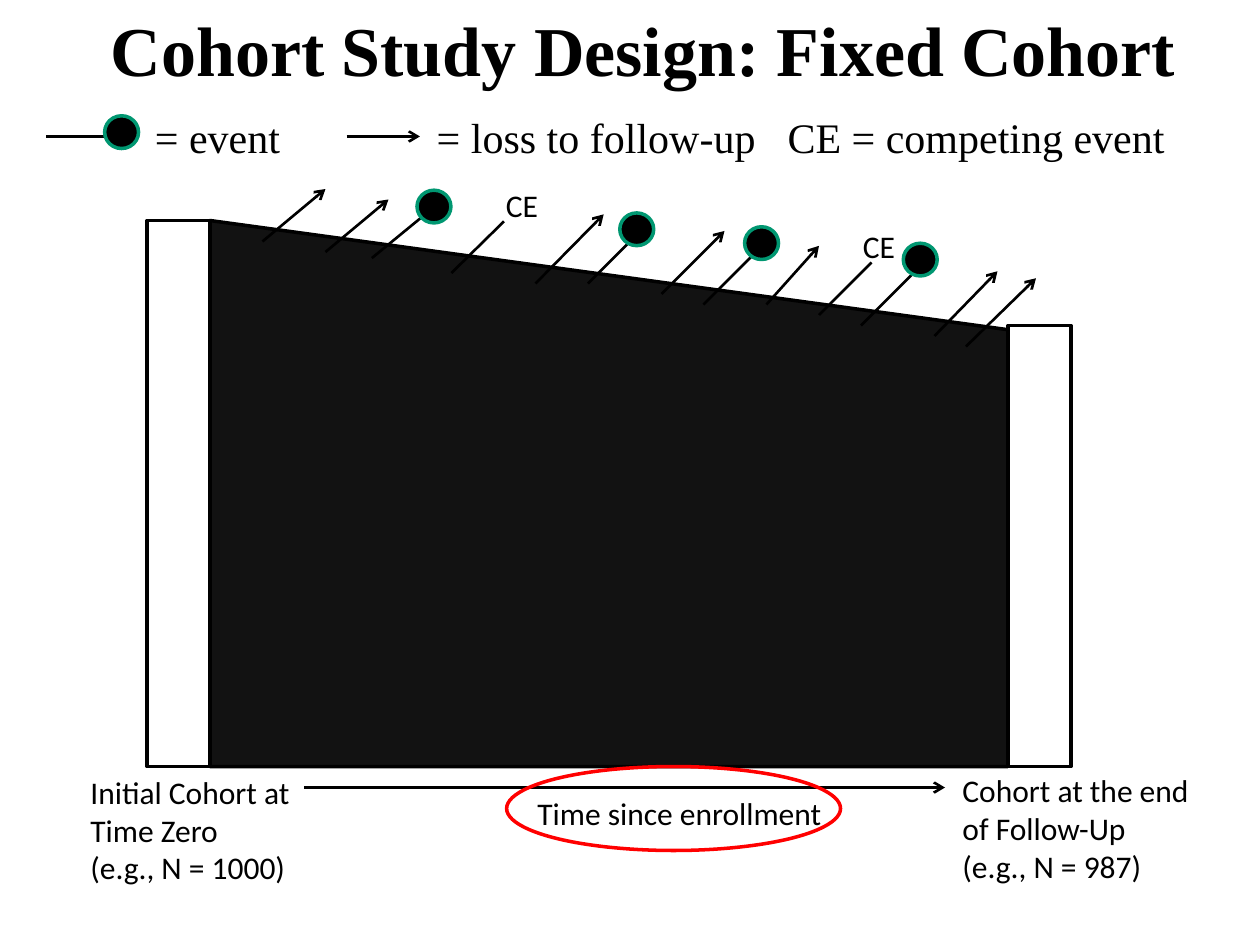
from typing import NamedTuple, Optional

from lxml.etree import SubElement
from pptx import Presentation
from pptx.dml.color import RGBColor
from pptx.enum.shapes import MSO_CONNECTOR, MSO_SHAPE
from pptx.enum.text import MSO_ANCHOR
from pptx.oxml.ns import qn
from pptx.util import Pt

COLORS = {"ink": "000000", "cohort": "121212", "event": "009771", "highlight": "FF0000"}
SANS, SERIF = "Calibri", "Times New Roman"


class Line(NamedTuple):
    x1: float
    y1: float
    x2: float
    y2: float
    arrow: bool = False
    width: float = 1.5


class Outline(NamedTuple):
    kind: MSO_SHAPE
    x: float
    y: float
    w: float
    h: float
    line: str = "ink"
    fill: Optional[str] = None


class Label(NamedTuple):
    x: float
    y: float
    w: float
    h: float
    text: str
    size: float = 18
    font: str = SANS
    bold: bool = False
    wrap: bool = False


def rgb(name: str) -> RGBColor:
    return RGBColor.from_string(COLORS[name])


def add_line(slide, line: Line) -> None:
    cx = slide.shapes.add_connector(
        MSO_CONNECTOR.STRAIGHT, Pt(line.x1), Pt(line.y1), Pt(line.x2), Pt(line.y2))
    cx.line.color.rgb = rgb("ink")
    cx.line.width = Pt(line.width)
    if line.arrow:
        SubElement(cx.line._get_or_add_ln(), qn("a:tailEnd"), type="arrow")
    SubElement(cx._element.spPr, qn("a:effectLst"))


def add_outline(slide, item: Outline):
    sp = slide.shapes.add_shape(item.kind, Pt(item.x), Pt(item.y), Pt(item.w), Pt(item.h))
    sp.shadow.inherit = False
    sp.line.color.rgb = rgb(item.line)
    sp.line.width = Pt(2)
    if item.fill:
        sp.fill.solid()
        sp.fill.fore_color.rgb = rgb(item.fill)
    else:
        sp.fill.background()
    return sp


def add_event_dot(slide, x: float, y: float) -> None:
    add_outline(slide, Outline(MSO_SHAPE.OVAL, x, y, 19.4, 18.7, "event", "ink"))


def add_label(slide, label: Label):
    box = slide.shapes.add_textbox(Pt(label.x), Pt(label.y), Pt(label.w), Pt(label.h))
    tf = box.text_frame
    tf.word_wrap = label.wrap
    tf.text = label.text
    for p in tf.paragraphs:
        for r in p.runs:
            r.font.name = label.font
            r.font.size = Pt(label.size)
            r.font.bold = label.bold
            r.font.color.rgb = rgb("ink")
    return tf


def add_tab_stops(p, stops: list[float]) -> None:
    tabs = SubElement(p._p.get_or_add_pPr(), qn("a:tabLst"))
    for stop in stops:
        SubElement(tabs, qn("a:tab"), pos=str(Pt(stop)), algn="l")


COHORT = Outline(MSO_SHAPE.FLOWCHART_MANUAL_INPUT, 120, 126, 456, 312, fill="cohort")
BARS = [
    Outline(MSO_SHAPE.RECTANGLE, 576, 186, 36, 252),
    Outline(MSO_SHAPE.RECTANGLE, 84, 126, 36, 312),
]
LOSSES = [
    (150, 138, 186, 108), (186, 144, 222, 114), (306, 162, 345, 122.5),
    (378, 168, 414, 132), (438, 174, 468, 140.5), (534, 192, 570, 155),
    (552, 198, 592, 159),
]
EVENT_STEMS = [
    (212.5, 147.5, 246, 120), (336, 162, 366, 132),
    (402, 174, 432, 144), (492, 186, 522, 156),
]
COMPETING_STEMS = [(258, 156, 288, 126.5), (468, 180, 498, 150)]
EVENT_DOTS = [(59.8, 66.2), (238.3, 108.7), (354.2, 121.7), (425.5, 129.6), (516.2, 139)]
TIME_AXIS = Line(174, 450, 540, 450, arrow=True)
LEGEND_LINES = [Line(26.5, 78, 62.5, 78, width=2), Line(198, 78, 240, 78, arrow=True)]
LEGEND = Label(24, 60, 664.5, 36,
               "\t= event\t= loss to follow-up\tCE = competing event", 24, SERIF, wrap=True)
LEGEND_STOPS = [57.5, 218.5, 419]
LABELS = [
    Label(56.2, 0, 629.3, 55.4, "Cohort Study Design: Fixed Cohort", 40, SERIF, bold=True),
    Label(282, 103, 33, 29, "CE"),
    Label(486, 126, 33, 29, "CE"),
    Label(300, 450, 178.5, 29, "Time since enrollment"),
    Label(44.6, 438, 141, 72.7, "Initial Cohort at Time Zero\n(e.g., N = 1000)", wrap=True),
    Label(542.9, 437, 145.5, 72.7, "Cohort at the end\nof Follow-Up\n(e.g., N = 987)"),
]
TIME_HIGHLIGHT = Outline(MSO_SHAPE.OVAL, 289.5, 438, 190.8, 48, "highlight")


def main() -> None:
    prs = Presentation()
    prs.slide_width, prs.slide_height = Pt(720), Pt(540)
    s = prs.slides.add_slide(prs.slide_layouts[6])

    cohort = add_outline(s, COHORT)
    cohort._element.spPr.find(qn("a:xfrm")).set("flipH", "1")
    for bar in BARS:
        add_outline(s, bar)

    for ends in LOSSES:
        add_line(s, Line(*ends, arrow=True))
    for ends in EVENT_STEMS + COMPETING_STEMS:
        add_line(s, Line(*ends))
    for line in [TIME_AXIS, *LEGEND_LINES]:
        add_line(s, line)
    for x, y in EVENT_DOTS:
        add_event_dot(s, x, y)

    legend = add_label(s, LEGEND)
    legend.vertical_anchor = MSO_ANCHOR.MIDDLE
    add_tab_stops(legend.paragraphs[0], LEGEND_STOPS)
    for label in LABELS:
        add_label(s, label)
    add_outline(s, TIME_HIGHLIGHT)
    prs.save("out.pptx")


if __name__ == "__main__":
    main()
